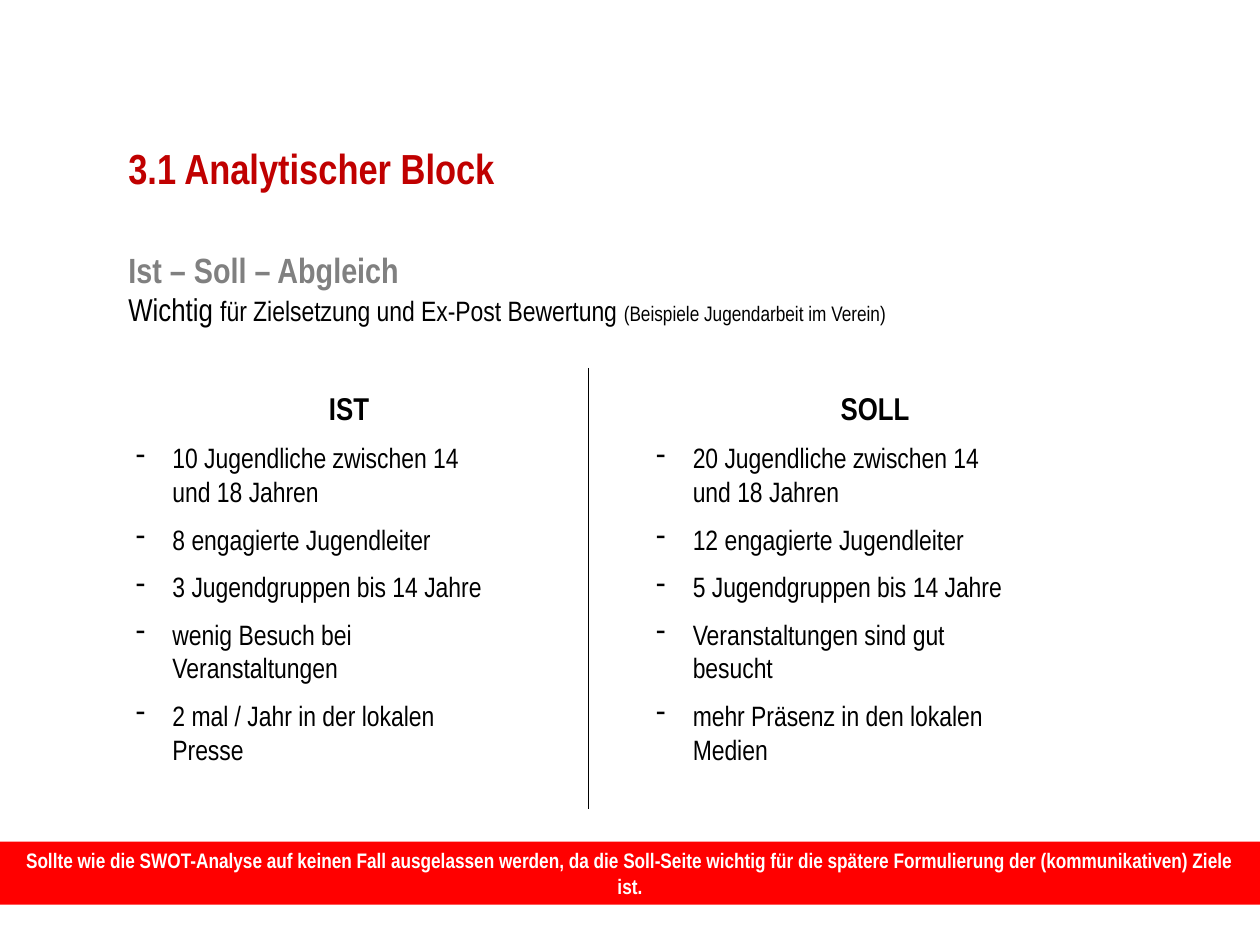
import pptx
import pptx.util
import pptx.dml.color
import pptx.enum.shapes
import pptx.enum.text
import pptx.oxml.ns
from lxml import etree

Inches, Pt = pptx.util.Inches, pptx.util.Pt
RGB = pptx.dml.color.RGBColor
CENTER = pptx.enum.text.PP_ALIGN.CENTER

BLACK = RGB(0x00, 0x00, 0x00)
WHITE = RGB(0xFF, 0xFF, 0xFF)
GREY = RGB(0x80, 0x80, 0x80)
DARK = RGB(0xC0, 0x00, 0x00)
RED = RGB(0xFF, 0x00, 0x00)
FACE = "Arial Narrow"

TITLE = "3.1 Analytischer Block"
HEAD = "Ist – Soll – Abgleich"
INTRO = [
    ("Wichtig ", 18),
    ("für Zielsetzung und Ex-Post Bewertung ", 16),
    ("(Beispiele Jugendarbeit im Verein)", 12),
]
COLUMNS = [
    (0.98, 3.58, "IST", [
        "10 Jugendliche zwischen 14\nund 18 Jahren",
        "8 engagierte Jugendleiter",
        "3 Jugendgruppen bis 14 Jahre",
        "wenig Besuch bei\nVeranstaltungen",
        "2 mal / Jahr in der lokalen\nPresse",
    ]),
    (5.11, 3.67, "SOLL", [
        "20 Jugendliche zwischen 14\nund 18 Jahren",
        "12 engagierte Jugendleiter",
        "5 Jugendgruppen bis 14 Jahre",
        "Veranstaltungen sind gut\nbesucht",
        "mehr Präsenz in den lokalen\nMedien",
    ]),
]
NOTE = ("Sollte wie die SWOT-Analyse auf keinen Fall ausgelassen werden, "
        "da die Soll-Seite wichtig für die spätere Formulierung der "
        "(kommunikativen) Ziele ist.")


def style(font, size, color, bold=False):
    font.name, font.size, font.bold = FACE, Pt(size), bold
    font.color.rgb = color


def add_box(slide, *place):
    """Add a wrapping text box and return its text frame."""
    frame = slide.shapes.add_textbox(*map(Inches, place)).text_frame
    frame.word_wrap = True
    return frame


def add_dash(para):
    """Give the paragraph a dash bullet with a hanging indent."""
    props = para._p.get_or_add_pPr()
    props.set("marL", str(Inches(0.29)))
    props.set("indent", str(-Inches(0.29)))
    etree.SubElement(props, pptx.oxml.ns.qn("a:buChar"), char="-")


def add_column(slide, left, width, head, items):
    frame = add_box(slide, left, 3.04, width, 3.23)
    top = frame.paragraphs[0]
    top.text, top.alignment = head, CENTER
    style(top.font, 18, BLACK, True)
    for item in items:
        para = frame.add_paragraph()
        para.text = item
        para.space_before = Pt(8)
        add_dash(para)
        style(para.font, 16, BLACK)


def add_intro(slide):
    para = add_box(slide, 0.92, 1.92, 8.58, 0.73).paragraphs[0]
    run = para.add_run()
    run.text = HEAD
    style(run.font, 20, GREY, True)
    para.add_line_break()
    for text, size in INTRO:
        run = para.add_run()
        run.text = text
        style(run.font, size, BLACK)


def add_rule(slide):
    rule = slide.shapes.add_connector(
        pptx.enum.shapes.MSO_CONNECTOR.STRAIGHT,
        *map(Inches, (4.67, 2.92, 4.67, 6.42)))
    rule.line.color.rgb = BLACK
    rule.line.width = Pt(0.75)
    etree.SubElement(rule._element.spPr, pptx.oxml.ns.qn("a:effectLst"))


def add_banner(slide):
    bar = slide.shapes.add_shape(
        pptx.enum.shapes.MSO_SHAPE.RECTANGLE,
        *map(Inches, (0, 6.68, 10, 0.5)))
    bar.shadow.inherit = False
    bar.fill.solid()
    bar.fill.fore_color.rgb = RED
    bar.line.fill.background()
    bar.text_frame.word_wrap = True
    para = bar.text_frame.paragraphs[0]
    para.text, para.alignment = NOTE, CENTER
    style(para.font, 12, WHITE, True)


def main():
    deck = pptx.Presentation()
    deck.slide_width, deck.slide_height = Inches(10), Inches(7.5)
    slide = deck.slides.add_slide(deck.slide_layouts[6])
    add_intro(slide)
    title = add_box(slide, 0.92, 1.08, 6.5, 0.5).paragraphs[0]
    title.text = TITLE
    style(title.font, 24, DARK, True)
    add_rule(slide)
    for column in COLUMNS:
        add_column(slide, *column)
    add_banner(slide)
    deck.save("out.pptx")


if __name__ == "__main__":
    main()
